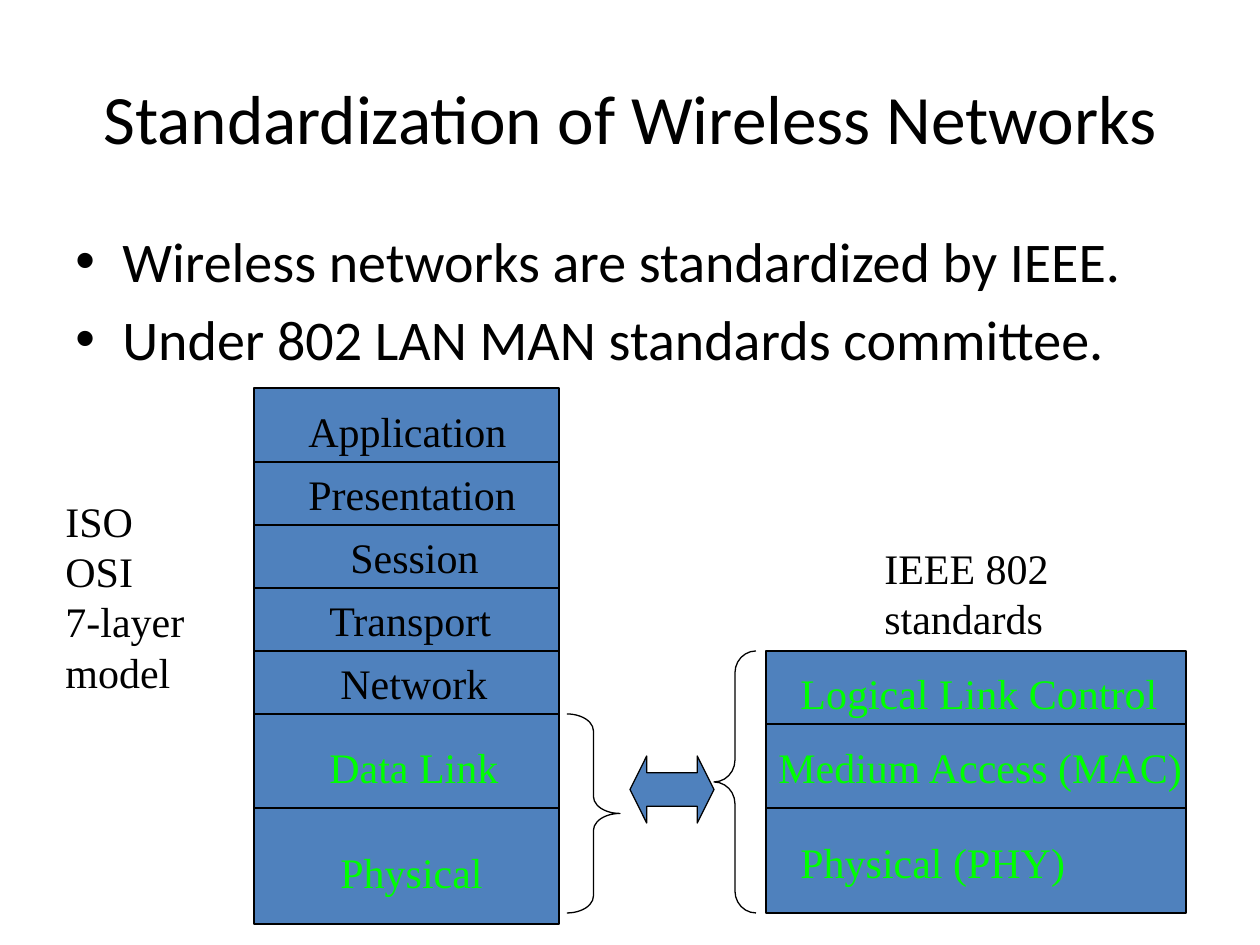
from lxml.etree import SubElement
from pptx import Presentation
from pptx.dml.color import RGBColor
from pptx.enum.shapes import MSO_CONNECTOR, MSO_SHAPE
from pptx.enum.text import MSO_ANCHOR, MSO_AUTO_SIZE, PP_ALIGN
from pptx.oxml.ns import qn
from pptx.util import Emu, Pt

COLORS = {"ink": "000000", "layer": "4F81BD", "standard": "00FF00"}
SERIF = {"name": "Times New Roman", "size": Pt(24)}

# Content: layers are (label, left, top, width, layer bottom, colour)
TITLE = "Standardization of Wireless Networks"
BULLETS = ["Wireless networks are standardized by IEEE.",
           "Under 802 LAN MAN standards committee."]
STACKS = [
    {"box": (254, 388, 305), "layers": [
        ("Application", 296, 399, 225, 462, "ink"),
        ("Presentation", 296, 462, 233, 525, "ink"),
        ("Session", 338, 525, 154, 588, "ink"),
        ("Transport", 317, 588, 189, 651, "ink"),
        ("Network", 328, 651, 173, 714, "ink"),
        ("Data Link", 317, 735, 194, 808, "standard"),
        ("Physical", 328, 840, 168, 924, "standard")]},
    {"box": (766, 651, 420), "layers": [
        ("Logical Link Control", 788, 661, 382, 724, "standard"),
        ("Medium Access (MAC)", 766, 735, 431, 808, "standard"),
        ("Physical (PHY)", 788, 830, 290, 913, "standard")]},
]
CAPTIONS = [(["ISO", "OSI", "7-layer", "model"], (53, 489, 144, 214)),
            (["IEEE 802", "standards"], (872, 536, 190, 113))]
LINKS = [  # shape, place, adjustments, fill
    (MSO_SHAPE.RIGHT_BRACE, (567, 714, 53, 199), (0.32, 0.5), None),
    (MSO_SHAPE.LEFT_BRACE, (714, 651, 42, 262), (0.52, 0.5), None),
    (MSO_SHAPE.LEFT_RIGHT_ARROW, (630, 756, 84, 67), (0.5, 0.25), "layer"),
]


def px(*lengths):
    return [Emu(round(n * 914400 / 126)) for n in lengths]


def color(key):
    return RGBColor.from_string(COLORS[key])


def add_text(lines, place, font, ink="ink", wrap=False, **paragraph_format):
    frame = slide.shapes.add_textbox(*px(*place)).text_frame
    frame.word_wrap = wrap
    if not wrap:
        frame.auto_size = MSO_AUTO_SIZE.SHAPE_TO_FIT_TEXT
    frame.text = "\n".join(lines)
    for paragraph in frame.paragraphs:
        for key, value in paragraph_format.items():
            setattr(paragraph, key, value)
        for key, value in font.items():
            setattr(paragraph.font, key, value)
        paragraph.font.color.rgb = color(ink)
    return frame


def add_outlined(kind, place, fill=None, adjustments=()):
    shape = slide.shapes.add_shape(kind, *px(*place))
    shape.shadow.inherit = False
    if fill:
        shape.fill.solid()
        shape.fill.fore_color.rgb = color(fill)
    else:
        shape.fill.background()
    shape.line.color.rgb = color("ink")
    shape.line.width = Pt(0.75)
    for i, value in enumerate(adjustments):
        shape.adjustments[i] = value


def add_divider(left, right, y):
    divider = slide.shapes.add_connector(MSO_CONNECTOR.STRAIGHT,
                                         *px(left, y, right, y))
    divider.line.color.rgb = color("ink")
    divider.line.width = Pt(0.75)
    SubElement(divider._element.spPr, qn("a:effectLst"))


prs = Presentation()
prs.slide_width, prs.slide_height = px(1260, 945)
slide = prs.slides.add_slide(prs.slide_layouts[6])

# Title and bullets
title = add_text([TITLE], (63, 38, 1134, 158),
                 {"name": "Calibri", "size": Pt(39.6)},
                 wrap=True, alignment=PP_ALIGN.CENTER)
title.vertical_anchor = MSO_ANCHOR.MIDDLE

body = add_text(BULLETS, (63, 220, 1134, 624),
                {"name": "Calibri", "size": Pt(32)},
                wrap=True, space_before=Pt(6.4))
indent = px(47)[0]
for paragraph in body.paragraphs:
    properties = paragraph._p.get_or_add_pPr()
    properties.set("marL", str(indent))
    properties.set("indent", str(-indent))
    # The bullet belongs before the default run properties
    bullet_font = properties.makeelement(qn("a:buFont"), {"typeface": "Arial"})
    bullet = properties.makeelement(qn("a:buChar"), {"char": "•"})
    default_run = properties.find(qn("a:defRPr"))
    default_run.addprevious(bullet_font)
    default_run.addprevious(bullet)

# Layer stacks
for stack in STACKS:
    left, top, width = stack["box"]
    layers = stack["layers"]
    bottom = layers[-1][4]
    add_outlined(MSO_SHAPE.RECTANGLE, (left, top, width, bottom - top), "layer")
    for label, x, y, label_width, layer_bottom, ink in layers:
        add_text([label], (x, y, label_width, 63), SERIF, ink)
        if layer_bottom != bottom:
            add_divider(left, left + width, layer_bottom)

# Captions, braces and arrow
for lines, place in CAPTIONS:
    add_text(lines, place, SERIF)
for kind, place, adjustments, fill in LINKS:
    add_outlined(kind, place, fill, adjustments)

prs.save("out.pptx")
